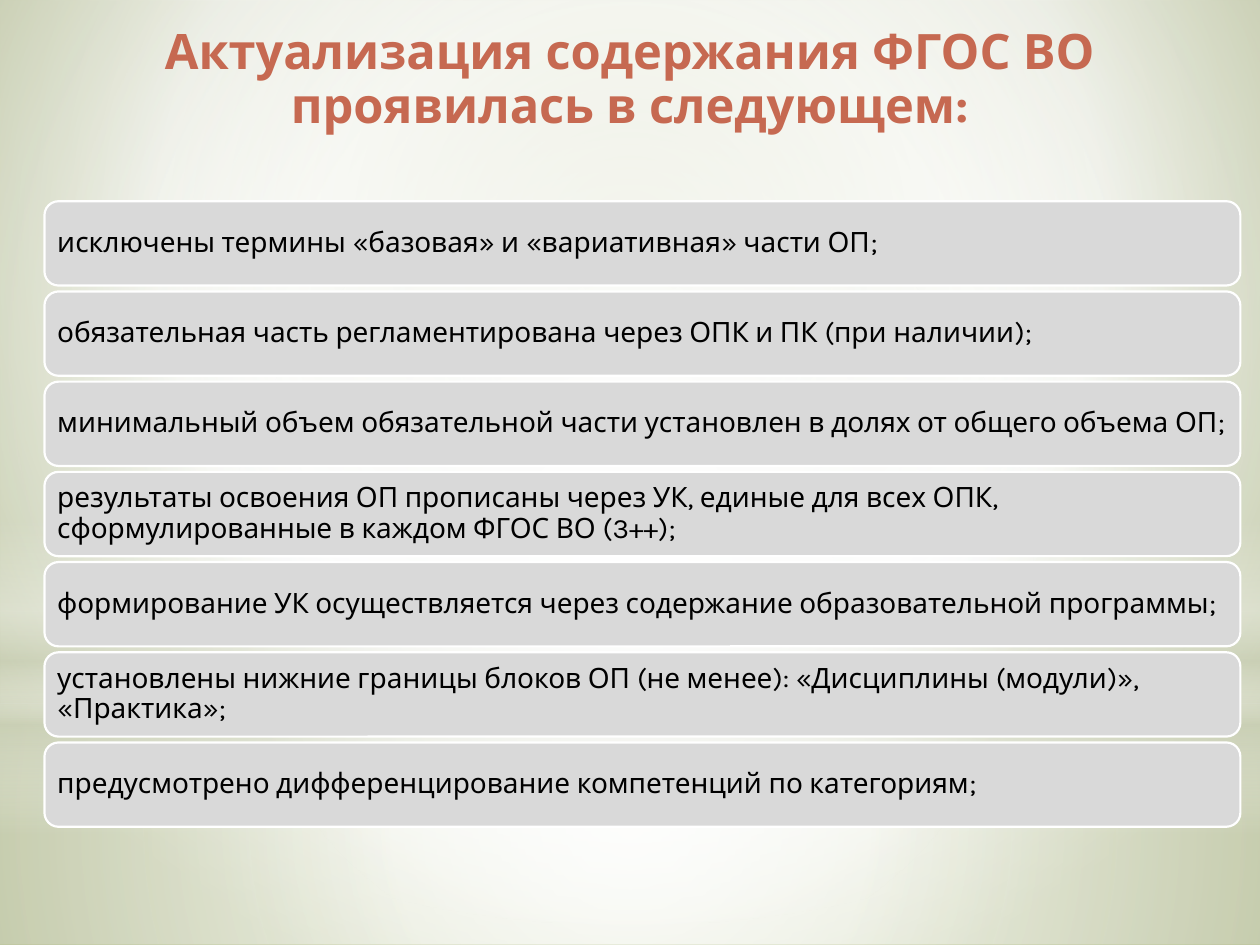
"""Build the slide on how the FGOS VO content was updated."""
from lxml import etree
from pptx import Presentation
from pptx.dml.color import RGBColor
from pptx.enum.shapes import MSO_SHAPE
from pptx.enum.text import MSO_ANCHOR, PP_ALIGN
from pptx.oxml.ns import qn
from pptx.util import Pt

RECTANGLE, OVAL = MSO_SHAPE.RECTANGLE, MSO_SHAPE.OVAL
ROUNDED = MSO_SHAPE.ROUNDED_RECTANGLE
LEFT, CENTER = PP_ALIGN.LEFT, PP_ALIGN.CENTER
TOP, MIDDLE = MSO_ANCHOR.TOP, MSO_ANCHOR.MIDDLE

WIDTH, HEIGHT = 720, 540
FONT = "Karla"
TITLE = (("Актуализация содержания ФГОС ВО проявилась в следующем", 27.9), (":", 28.8))
POINTS = [
    "исключены термины «базовая» и «вариативная» части ОП;",
    "обязательная часть регламентирована через ОПК и ПК (при наличии);",
    "минимальный объем обязательной части установлен в долях от общего объема ОП;",
    "результаты освоения ОП прописаны через УК, единые для всех ОПК, "
    "сформулированные в каждом ФГОС ВО (3++);",
    "формирование УК осуществляется через содержание образовательной программы;",
    "установлены нижние границы блоков ОП (не менее): «Дисциплины (модули)», «Практика»;",
    "предусмотрено дифференцирование компетенций по категориям;",
]
BAR_LEFT, BAR_TOP, BAR_WIDTH, BAR_HEIGHT, BAR_STEP = 25.4, 115, 683.4, 48.2, 51.55

CENTERED = (50, 50, 50, 50)
BACKGROUND = [(0, "C8CFAC", 100), (60, "FFFFFF", 100), (100, "AFBB84", 100)]
BACKGROUND_FOCUS = (20, 10, 20, 60)
LAYERS = [
    (RECTANGLE, (0, 402, WIDTH, 138), CENTERED,
     [(0, "FFFFFF", 91), (37, "FFFFFF", 76), (100, "CCD1B9", 79)]),
    (RECTANGLE, (0, 0, WIDTH, 402), CENTERED,
     [(0, "FFFFFF", 89), (48, "FFFFFF", 62), (100, "CCD1B9", 79)]),
    (RECTANGLE, (0, 297, WIDTH, 180), None,
     [(0, "FFFFFF", 0), (29, "FFFFFF", 30), (45, "CCD1B9", 40),
      (55, "FFFFFF", 26), (65, "CCD1B9", 60), (100, "FFFFFF", 0)]),
    (OVAL, (0, 126, WIDTH, 402), CENTERED, [(0, "FFFFFF", 100), (56, "FFFFFF", 0)]),
]


def color(value):
    """Return the colour of a hex string."""
    return RGBColor.from_string(value)


def set_gradient(fill, properties, stops, focus):
    """Fill with a circular gradient around focus, or a vertical one without it."""
    fill.solid()
    gradient = etree.Element(qn("a:gradFill"), rotWithShape="1")
    stop_list = etree.SubElement(gradient, qn("a:gsLst"))
    for position, value, opacity in stops:
        stop = etree.SubElement(stop_list, qn("a:gs"), pos=str(position * 1000))
        tint = etree.SubElement(stop, qn("a:srgbClr"), val=value)
        if opacity < 100:
            etree.SubElement(tint, qn("a:alpha"), val=str(opacity * 1000))
    if focus:
        circle = etree.SubElement(gradient, qn("a:path"), path="circle")
        sides = {side: str(share * 1000) for side, share in zip("ltrb", focus)}
        etree.SubElement(circle, qn("a:fillToRect"), **sides)
    else:
        etree.SubElement(gradient, qn("a:lin"), ang="5400000", scaled="0")
    properties.replace(properties.find(qn("a:solidFill")), gradient)


def add_shape(slide, kind, box):
    """Add a preset shape without shadow."""
    shape = slide.shapes.add_shape(kind, *map(Pt, box))
    shape.shadow.inherit = False
    return shape


def write(shape, runs, font_color, bold, alignment, anchor, margin):
    """Write one paragraph of (text, size) runs into a shape."""
    frame = shape.text_frame
    frame.word_wrap = True
    frame.vertical_anchor = anchor
    frame.margin_left = frame.margin_right = Pt(margin)
    frame.margin_top = frame.margin_bottom = Pt(margin)
    paragraph = frame.paragraphs[0]
    paragraph.alignment = alignment
    paragraph.line_spacing = 0.9
    paragraph.font.name = FONT
    paragraph.font.bold = bold
    paragraph.font.color.rgb = color(font_color)
    for text, size in runs:
        run = paragraph.add_run()
        run.text = text
        run.font.size = Pt(size)


def main():
    """Build and save the slide."""
    presentation = Presentation()
    presentation.slide_width, presentation.slide_height = Pt(WIDTH), Pt(HEIGHT)
    slide = presentation.slides.add_slide(presentation.slide_layouts[6])

    background_fill = slide.background.fill
    background_fill.solid()
    background = slide.element.find(".//" + qn("p:bgPr"))
    set_gradient(background_fill, background, BACKGROUND, BACKGROUND_FOCUS)
    for kind, box, focus, stops in LAYERS:
        layer = add_shape(slide, kind, box)
        layer.line.fill.background()
        set_gradient(layer.fill, layer.element.spPr, stops, focus)

    for index, point in enumerate(POINTS):
        top = BAR_TOP + index * BAR_STEP
        bar = add_shape(slide, ROUNDED, (BAR_LEFT, top, BAR_WIDTH, BAR_HEIGHT))
        bar.fill.solid()
        bar.fill.fore_color.rgb = color("D9D9D9")
        bar.line.color.rgb = color("FFFFFF")
        bar.line.width = Pt(1.25)
        write(bar, [(point, 16)], "000000", False, LEFT, MIDDLE, 5)

    title = slide.shapes.add_textbox(Pt(0), Pt(9.4), Pt(WIDTH), Pt(66))
    write(title, TITLE, "C66951", True, CENTER, TOP, 6)
    presentation.save("out.pptx")


if __name__ == "__main__":
    main()
